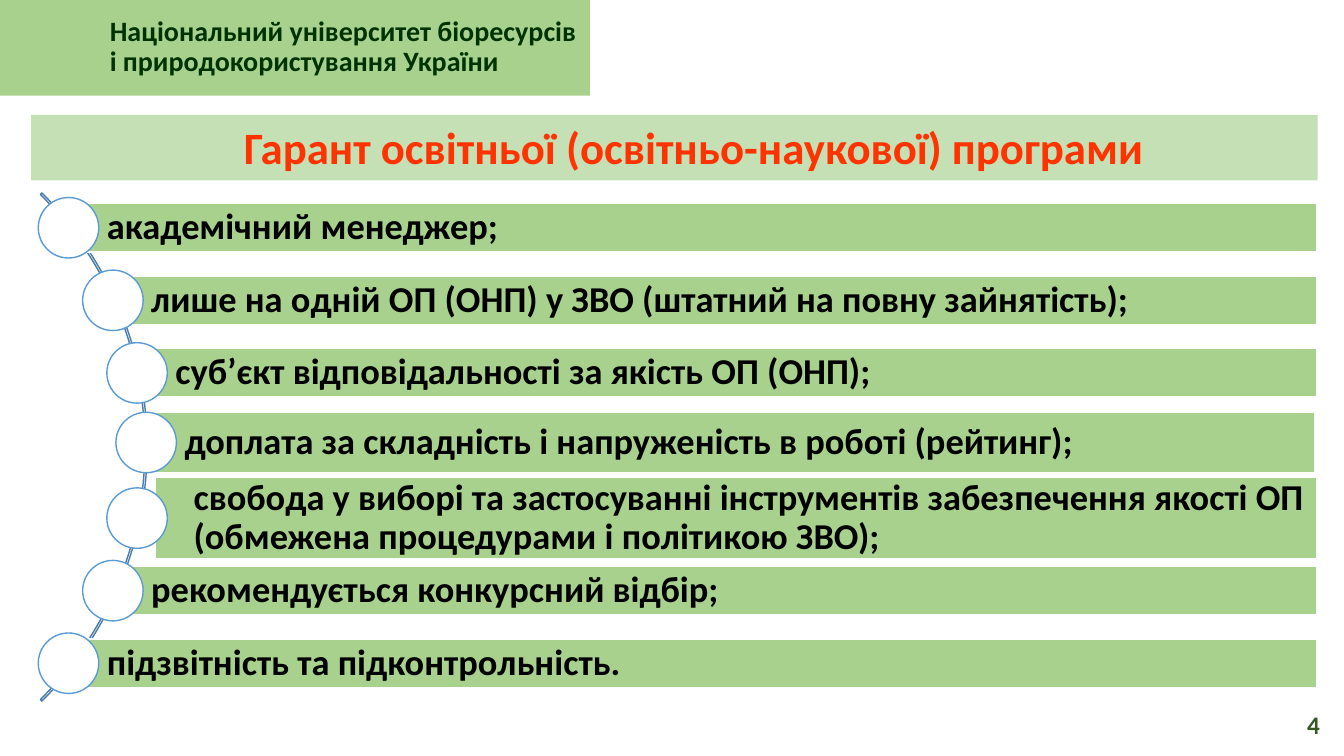
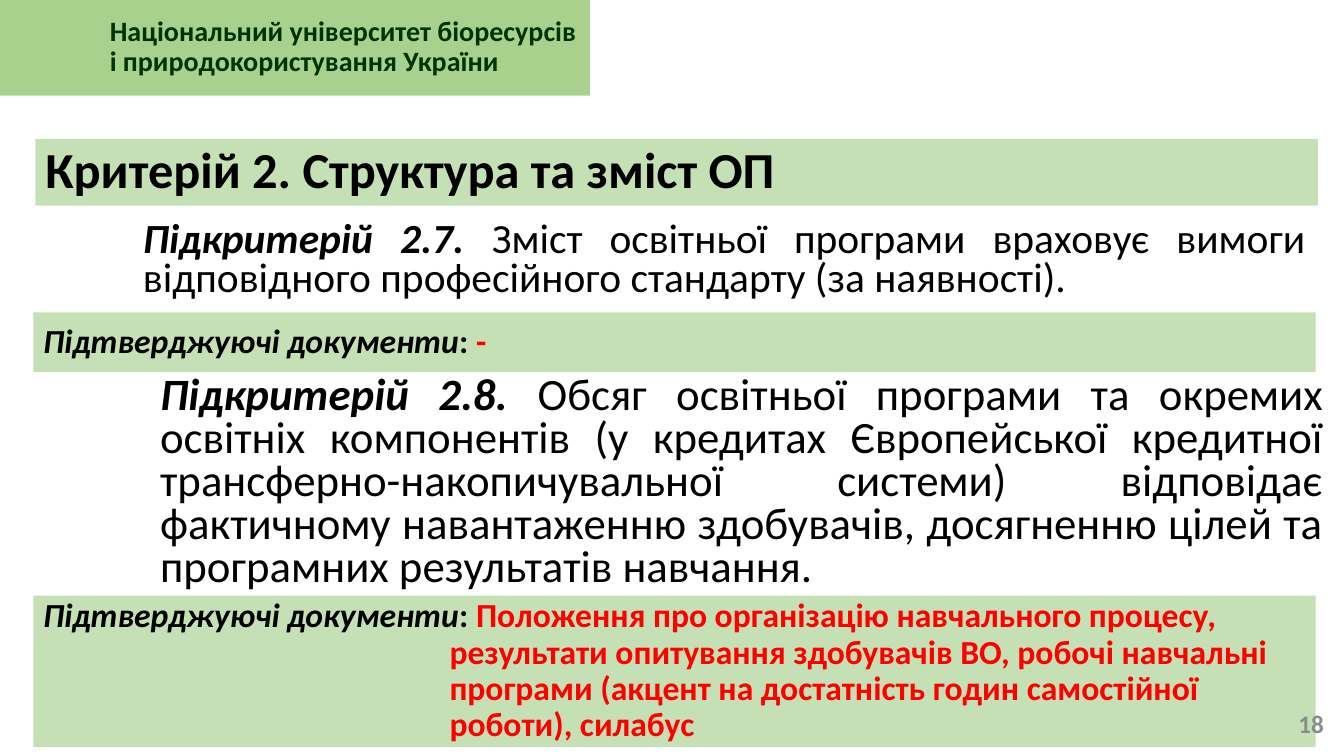
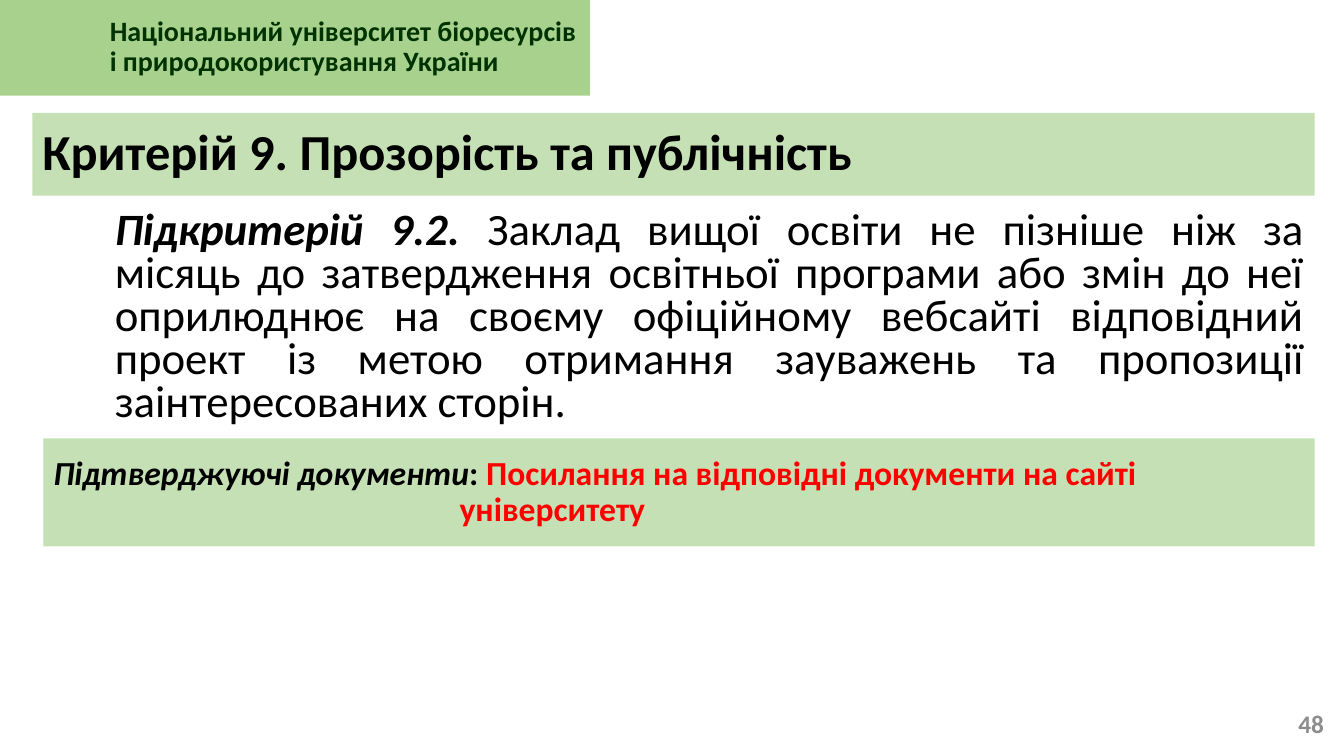
"""Build three slides on programme guarantors and accreditation criteria."""
from dataclasses import dataclass

from pptx import Presentation
from pptx.dml.color import RGBColor
from pptx.enum import shapes, text
from pptx.util import Inches, Pt


@dataclass(frozen=True)
class Theme:
    font: str = "Calibri"
    band: str = "A9D18E"
    pale_band: str = "C5E0B4"
    white: str = "FFFFFF"
    ink: str = "000000"
    university: str = "003300"
    accent: str = "FF3300"
    evidence: str = "FF0000"
    arc: str = "497CAB"
    node: str = "5B9BD5"
    number_dark: str = "385723"
    number_grey: str = "8C8C8C"
    criterion_size: float = 36
    title_size: float = 32
    body_size: float = 32
    compact_size: float = 29.6
    role_size: float = 26
    evidence_size: float = 24
    university_size: float = 20
    number_size: float = 18


THEME = Theme()
ALIGN = text.PP_ALIGN
ANCHOR = text.MSO_ANCHOR
SHAPE = shapes.MSO_SHAPE

UNIVERSITY = "Національний університет біоресурсів і природокористування України"
GUARANTOR = "Гарант освітньої (освітньо-наукової) програми"
ROLES = [
    "академічний менеджер;",
    "лише на одній ОП (ОНП) у ЗВО (штатний на повну зайнятість);",
    "cуб’єкт відповідальності за якість ОП (ОНП);",
    "доплата за складність і напруженість в роботі (рейтинг);",
    "свобода у виборі та застосуванні інструментів забезпечення якості ОП "
    "(обмежена процедурами і політикою ЗВО);",
    "рекомендується конкурсний відбір;",
    "підзвітність та підконтрольність.",
]
EVIDENCE = "Підтверджуючі документи"
CRITERIA = [
    {
        "title": "Критерій 2. Структура та зміст ОП",
        "title_box": (0.35, 1.38, 12.72, 0.66),
        "number": "18",
        "parts": [
            ("Підкритерій 2.7. ",
             "Зміст освітньої програми враховує вимоги відповідного "
             "професійного стандарту (за наявності).",
             THEME.compact_size, (1.32, 2.11, 11.74, 0.96),
             "-", (0.33, 3.1, 12.72, 0.59)),
            ("Підкритерій 2.8. ",
             "Обсяг освітньої програми та окремих освітніх компонентів "
             "(у кредитах Європейської кредитної трансферно-накопичувальної "
             "системи) відповідає фактичному навантаженню здобувачів, "
             "досягненню цілей та програмних результатів навчання.",
             THEME.body_size, (1.49, 3.69, 11.74, 2.21),
             "Положення про організацію навчального процесу, результати "
             "опитування здобувачів ВО, робочі навчальні програми (акцент на "
             "достатність годин самостійної роботи), силабус",
             (0.33, 5.91, 12.72, 1.5)),
        ],
    },
    {
        "title": "Критерій 9. Прозорість та публічність",
        "title_box": (0.32, 1.12, 12.72, 0.82),
        "number": "48",
        "parts": [
            ("Підкритерій 9.2. ",
             "Заклад вищої освіти не пізніше ніж за місяць до затвердження "
             "освітньої програми або змін до неї оприлюднює на своєму "
             "офіційному вебсайті відповідний проект із метою отримання "
             "зауважень та пропозиції заінтересованих сторін.",
             THEME.body_size, (1.04, 2.13, 12, 2.06),
             "Посилання на відповідні документи на сайті університету",
             (0.43, 4.35, 12.61, 1.07)),
        ],
    },
]

ROLE_RIGHT, ROLE_TOP, ROLE_STEP, ROLE_HEIGHT = 13.06, 2.26, 0.72, 0.48
NODE_SIZE = 0.6
NODE_CENTRES = [1.45, 1.36, 1.12, 0.68]
ROLE_CHANGES = {
    3: {"centre": 4.39, "height": 0.59, "right": 13.04},
    4: {"left": 1.54, "height": 0.8},
}


def colour(value):
    return RGBColor.from_string(value)


def inches(box):
    return [Inches(length) for length in box]


def paint(shape, fill=None, line=None):
    shape.shadow.inherit = False
    if fill:
        shape.fill.solid()
        shape.fill.fore_color.rgb = colour(fill)
    else:
        shape.fill.background()
    if line:
        shape.line.color.rgb = colour(line)
        shape.line.width = Pt(1)
    else:
        shape.line.fill.background()


def write(shape, runs, size, align=ALIGN.LEFT, anchor=ANCHOR.MIDDLE,
          spacing=0.9, margin=0, indent=0):
    """Write (text, colour, bold, italic) runs as one paragraph."""
    frame = shape.text_frame
    frame.word_wrap = True
    frame.auto_size = text.MSO_AUTO_SIZE.NONE
    frame.vertical_anchor = anchor
    frame.margin_left = frame.margin_right = Inches(0.1)
    frame.margin_top = frame.margin_bottom = Inches(0.05)
    paragraph = frame.paragraphs[0]
    paragraph.alignment = align
    paragraph.line_spacing = spacing
    properties = paragraph._p.get_or_add_pPr()
    properties.set("marL", str(Inches(margin)))
    properties.set("indent", str(Inches(indent)))
    for words, ink, bold, italic in runs:
        run = paragraph.add_run()
        run.text = words
        run.font.name = THEME.font
        run.font.size = Pt(size)
        run.font.bold = bold
        run.font.italic = italic
        run.font.color.rgb = colour(ink)
    return frame


def add_panel(slide, box, fill, line=None, kind=SHAPE.RECTANGLE):
    panel = slide.shapes.add_shape(kind, *inches(box))
    paint(panel, fill, line)
    return panel


def add_title(slide, words, box, size, ink=THEME.ink, **style):
    title = slide.shapes.title
    title.left, title.top, title.width, title.height = inches(box)
    title.fill.solid()
    title.fill.fore_color.rgb = colour(THEME.pale_band)
    write(title, [(words, ink, True, False)], size, **style)


def add_number(slide, number, ink, box):
    number_box = slide.shapes.add_textbox(*inches(box))
    write(number_box, [(number, ink, True, False)], THEME.number_size,
          align=ALIGN.RIGHT, spacing=1.0)


def share_university_band(slide):
    """Put the university band on the layout used by every slide."""
    band = add_panel(slide, (0, -0.01, 5.85, 0.96), THEME.band)
    write(band, [(UNIVERSITY, THEME.university, True, False)],
          THEME.university_size, margin=0.99)
    slide.slide_layout.shapes.element.insert(2, band._element)


def add_role(slide, index, role):
    node_x = NODE_CENTRES[abs(index - len(ROLES) // 2)]
    change = ROLE_CHANGES.get(index, {})
    centre = change.get("centre", ROLE_TOP + index * ROLE_STEP)
    height = change.get("height", ROLE_HEIGHT)
    left = change.get("left", node_x)
    right = change.get("right", ROLE_RIGHT)
    bar = add_panel(slide, (left, centre - height / 2, right - left, height),
                    THEME.band, THEME.white)
    frame = write(bar, [(role, THEME.ink, True, False)], THEME.role_size)
    frame.margin_left = Inches(0.38)
    frame.margin_right = frame.margin_top = frame.margin_bottom = Inches(0.07)
    add_panel(slide, (node_x - NODE_SIZE / 2, centre - NODE_SIZE / 2,
                      NODE_SIZE, NODE_SIZE),
              THEME.white, THEME.node, SHAPE.OVAL)


def build_guarantor(slide):
    add_title(slide, GUARANTOR, (0.31, 1.14, 12.76, 0.65), THEME.title_size,
              THEME.accent, align=ALIGN.CENTER, anchor=ANCHOR.TOP,
              spacing=1.0, margin=0.39)
    arc = add_panel(slide, (-5.67, 0.87, 7.13, 7.13), None, THEME.arc,
                    SHAPE.BLOCK_ARC)
    for position, value in enumerate((189, 27, 0.003)):
        arc.adjustments[position] = value
    for index, role in enumerate(ROLES):
        add_role(slide, index, role)
    add_number(slide, "4", THEME.number_dark, (12.81, 6.99, 0.38, 0.4))


def build_criterion(slide, criterion):
    add_title(slide, criterion["title"], criterion["title_box"],
              THEME.criterion_size)
    for label, body, size, body_box, proof, proof_box in criterion["parts"]:
        subcriterion = slide.shapes.add_textbox(*inches(body_box))
        write(subcriterion, [(label, THEME.ink, True, True),
                             (body, THEME.ink, False, False)],
              size, align=ALIGN.JUSTIFY, spacing=0.8)
        evidence = add_panel(slide, proof_box, THEME.pale_band)
        write(evidence, [(EVIDENCE, THEME.ink, True, True),
                         (": ", THEME.ink, True, False),
                         (proof, THEME.evidence, True, False)],
              THEME.evidence_size, margin=4.03, indent=-4.03)
    add_number(slide, criterion["number"], THEME.number_grey,
               (12.74, 6.98, 0.49, 0.4))


def main():
    deck = Presentation()
    deck.slide_width, deck.slide_height = Inches(13.33), Inches(7.5)
    title_only = deck.slide_layouts[5]
    guarantor = deck.slides.add_slide(title_only)
    share_university_band(guarantor)
    build_guarantor(guarantor)
    for criterion in CRITERIA:
        build_criterion(deck.slides.add_slide(title_only), criterion)
    deck.save("out.pptx")


if __name__ == "__main__":
    main()
